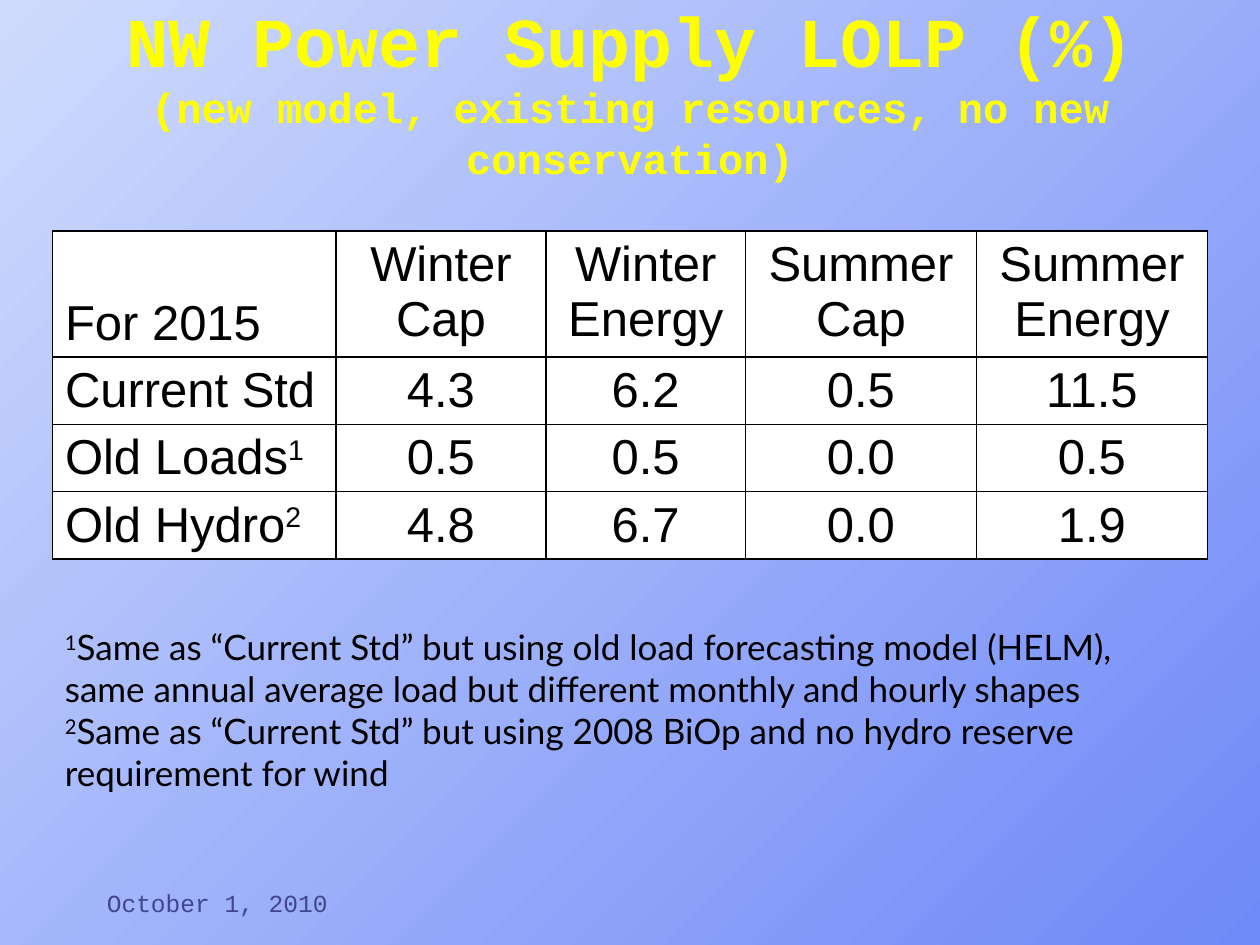
"""Build the NW power supply LOLP slide with its results table and footnotes."""
from dataclasses import dataclass

from lxml.etree import fromstring
from pptx import Presentation
from pptx.dml.color import RGBColor as RGB
from pptx.enum.text import MSO_ANCHOR as Anchor, MSO_AUTO_SIZE as AutoSize, PP_ALIGN as Align
from pptx.util import Inches, Pt


@dataclass(frozen=True)
class Theme:
    yellow: RGB = RGB(0xFF, 0xFF, 0x00)
    black: RGB = RGB(0, 0, 0)
    white: RGB = RGB(0xFF, 0xFF, 0xFF)
    navy: RGB = RGB(0x40, 0x45, 0x8C)
    gradient: tuple = (RGB(0xCF, 0xDB, 0xFD), RGB(0x6F, 0x89, 0xF7))
    mono: str = "Courier New"
    sans: str = "Arial"
    note: str = "Lato"
    title_size: int = 40
    subtitle_size: int = 24
    table_size: int = 28
    note_size: int = 20
    date_size: int = 14


T = Theme()
A_NS = "http://schemas.openxmlformats.org/drawingml/2006/main"


def grid(*cells):
    return [int(Inches(n / 12)) for n in cells]


def write(p, text, font=T.sans, size=T.table_size, color=T.black, bold=False, sup=False):
    r = p.add_run()
    r.text = text
    r.font.name, r.font.size, r.font.bold = font, Pt(size), bold
    r.font.color.rgb = color
    if sup:
        r.font._element.set("baseline", "30000")


prs = Presentation()
prs.slide_width, prs.slide_height = grid(120, 90)
s = prs.slides.add_slide(prs.slide_layouts[5])

fill = s.background.fill
fill.gradient()
fill.gradient_angle = 315
for stop, color in zip(fill.gradient_stops, T.gradient):
    stop.color.rgb = color

title = s.shapes.title
title.left, title.top, title.width, title.height = grid(9, 4, 102, 14)
tf = title.text_frame
tf.auto_size, tf.word_wrap, tf.vertical_anchor = AutoSize.NONE, True, Anchor.BOTTOM
p = tf.paragraphs[0]
p.alignment = Align.CENTER
heading = dict(font=T.mono, color=T.yellow, bold=True)
write(p, "NW Power Supply LOLP (%)", size=T.title_size, **heading)
p.add_line_break()
write(p, "(new model, existing resources, no new conservation)", size=T.subtitle_size, **heading)

rows = [
    ("For 2015", "", "Winter Cap", "Winter Energy", "Summer Cap", "Summer Energy"),
    ("Current Std", "", "4.3", "6.2", "0.5", "11.5"),
    ("Old Loads", "1", "0.5", "0.5", "0.0", "0.5"),
    ("Old Hydro", "2", "4.8", "6.7", "0.0", "1.9"),
]
col_widths = grid(27, 20, 19, 22, 22)
row_heights = grid(12, 6.4, 6.4, 6.4)
left, top = grid(5, 22)
table = s.shapes.add_table(
    len(rows), len(col_widths), left, top, sum(col_widths), sum(row_heights)
).table
table.first_row = table.horz_banding = False
for column, width in zip(table.columns, col_widths):
    column.width = width
for row, height, (label, mark, *values) in zip(table.rows, row_heights, rows):
    row.height = height
    for i, (cell, text) in enumerate(zip(row.cells, [label, *values])):
        p = cell.text_frame.paragraphs[0]
        p.alignment = Align.CENTER if i else Align.LEFT
        write(p, text)
        if mark and i == 0:
            write(p, mark, sup=True)
        cell.vertical_anchor = Anchor.TOP if i else Anchor.BOTTOM
        for side in "LRTB":
            cell._tc.get_or_add_tcPr().append(fromstring(
                f'<a:ln{side} xmlns:a="{A_NS}" w="{Pt(1)}"><a:solidFill>'
                f'<a:srgbClr val="{T.black}"/></a:solidFill></a:ln{side}>'))
        cell.fill.solid()
        cell.fill.fore_color.rgb = T.white

notes = [
    ("1", "Same as “Current Std” but using old load forecasting model (HELM), "
          "same annual average load but different monthly and hourly shapes"),
    ("2", "Same as “Current Std” but using 2008 BiOp and no hydro reserve "
          "requirement for wind"),
]
tf = s.shapes.add_textbox(*grid(5, 59, 109, 17.4)).text_frame
tf.word_wrap = True
for i, (mark, text) in enumerate(notes):
    p = tf.add_paragraph() if i else tf.paragraphs[0]
    write(p, mark, font=T.note, size=T.note_size, sup=True)
    write(p, text, font=T.note, size=T.note_size)

tf = s.shapes.add_textbox(*grid(9, 82, 25, 6)).text_frame
tf.word_wrap, tf.vertical_anchor = True, Anchor.BOTTOM
write(tf.paragraphs[0], "October 1, 2010", font=T.mono, size=T.date_size, color=T.navy)

prs.save("out.pptx")
